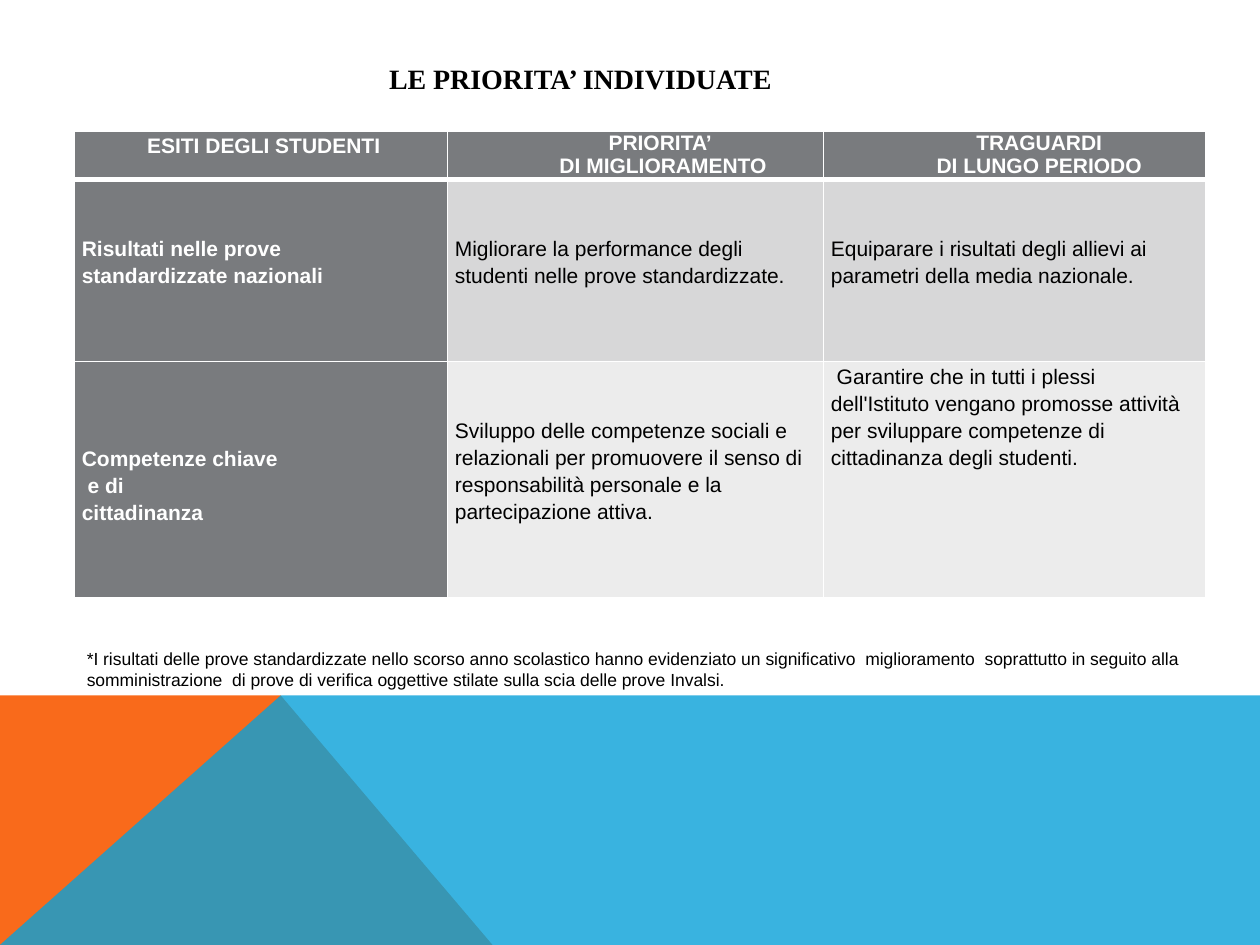
from lxml.etree import SubElement
from pptx import Presentation
from pptx.dml.color import RGBColor
from pptx.enum.text import MSO_ANCHOR, PP_ALIGN
from pptx.oxml import parse_xml
from pptx.oxml.ns import nsdecls, qn
from pptx.util import Cm, Pt

WHITE = RGBColor(0xFF, 0xFF, 0xFF)
BLACK = RGBColor(0, 0, 0)
DARK_GRAY = RGBColor(0x79, 0x7B, 0x7E)
MID_GRAY = RGBColor(0xD7, 0xD7, 0xD8)
LIGHT_GRAY = RGBColor(0xEC, 0xEC, 0xEC)
ORANGE = RGBColor(0xF9, 0x6A, 0x1B)
BLUE = RGBColor(0x08, 0xA1, 0xD9)

COLUMN_WIDTHS = (7.52, 7.58, 7.7)
ROW_HEIGHTS = (0.98, 3.67, 4.75)
BLANK_LINE = 0.55  # height of one table line
TEXT_INDENT = 1

HEADERS = (
    [" ESITI DEGLI STUDENTI"],
    ["PRIORITA’", " DI MIGLIORAMENTO"],
    ["TRAGUARDI", "DI LUNGO PERIODO"],
)
# Each cell: lines left free above the text, paragraphs
BODY_ROWS = (
    (
        (2, ["Risultati nelle prove", "standardizzate nazionali"]),
        (2, ["Migliorare la performance degli studenti nelle prove standardizzate."]),
        (2, ["Equiparare i risultati degli allievi ai parametri della media nazionale."]),
    ),
    (
        (3, ["Competenze chiave", " e di", "cittadinanza"]),
        (2, ["Sviluppo delle competenze sociali e relazionali per promuovere il senso "
             "di responsabilità personale e la partecipazione attiva."]),
        (0, [" Garantire che in tutti i plessi dell'Istituto vengano promosse attività "
             "per sviluppare competenze di cittadinanza degli studenti."]),
    ),
)
FOOTNOTE = (
    "*I risultati delle prove standardizzate nello scorso anno scolastico hanno evidenziato "
    "un significativo  miglioramento  soprattutto in seguito alla somministrazione  di prove "
    "di verifica oggettive stilate sulla scia delle prove Invalsi."
)


def format_paragraph(paragraph, font_name, size, color, bold=False, align=PP_ALIGN.LEFT):
    paragraph.alignment = align
    font = paragraph.font
    font.name, font.size, font.bold = font_name, Pt(size), bold
    font.color.rgb = color


def add_polygon(slide, points, color, alpha=100):
    """Draw a closed outline through points in centimetres; alpha is in percent."""
    corners = [(Cm(x), Cm(y)) for x, y in points]
    builder = slide.shapes.build_freeform(*corners[0], scale=1.0)
    builder.add_line_segments(corners[1:], close=True)
    shape = builder.convert_to_shape()
    shape.shadow.inherit = False
    shape.line.fill.background()
    shape.fill.solid()
    shape.fill.fore_color.rgb = color
    if alpha < 100:
        rgb = shape._element.spPr.find(qn("a:solidFill"))[0]
        SubElement(rgb, qn("a:alpha")).set("val", str(alpha * 1000))


def add_bottom_band(slide, left, top, width, height):
    right, bottom = left + width, top + height
    peak = (left + 5.66, top)
    add_polygon(slide, [(left, bottom), (left, top), peak, (left + 9.93, bottom)], ORANGE)
    add_polygon(slide, [(left, bottom), peak, (right, top), (right, bottom)], BLUE, alpha=80)


def add_title(slide, left, top, width, height):
    title = slide.shapes.title
    title.left, title.top, title.width, title.height = map(Cm, (left, top, width, height))
    frame = title.text_frame
    frame.text = "LE PRIORITA’ INDIVIDUATE"
    frame.vertical_anchor = MSO_ANCHOR.TOP
    format_paragraph(frame.paragraphs[0], "Times New Roman", 16, BLACK, True, PP_ALIGN.CENTER)


def set_borders(cell, bottom_width):
    properties = cell._tc.get_or_add_tcPr()
    for side, width in (("L", 1), ("R", 1), ("T", 1), ("B", bottom_width)):
        properties.append(parse_xml(
            f'<a:ln{side} {nsdecls("a")} w="{Pt(width)}"><a:solidFill>'
            f'<a:srgbClr val="{WHITE}"/></a:solidFill></a:ln{side}>'))


def fill_cell(cell, lines, fill, color, bold=False, align=PP_ALIGN.LEFT,
              free_lines=0, spacing=1.15, indent=0, bottom_width=1):
    set_borders(cell, bottom_width)
    cell.fill.solid()
    cell.fill.fore_color.rgb = fill
    cell.margin_left = cell.margin_right = Cm(0.15)
    cell.margin_top, cell.margin_bottom = Cm(free_lines * BLANK_LINE), 0
    cell.text = "\n".join(lines)
    for paragraph in cell.text_frame.paragraphs:
        format_paragraph(paragraph, "Arial", 12, color, bold, align)
        paragraph.line_spacing = spacing
        paragraph._p.get_or_add_pPr().set("marL", str(Cm(indent)))


def add_priority_table(slide, left, top):
    table = slide.shapes.add_table(
        len(ROW_HEIGHTS), len(COLUMN_WIDTHS), Cm(left), Cm(top),
        Cm(sum(COLUMN_WIDTHS)), Cm(sum(ROW_HEIGHTS))).table
    table.horz_banding = False
    for column, width in zip(table.columns, COLUMN_WIDTHS):
        column.width = Cm(width)
    for row, height in zip(table.rows, ROW_HEIGHTS):
        row.height = Cm(height)

    for index, lines in enumerate(HEADERS):
        first = index == 0
        fill_cell(table.cell(0, index), lines, DARK_GRAY, WHITE, True, PP_ALIGN.CENTER,
                  spacing=1.15 if first else 1.0,
                  indent=0 if first else TEXT_INDENT, bottom_width=3)
    for row, (cells, fill) in enumerate(zip(BODY_ROWS, (MID_GRAY, LIGHT_GRAY)), start=1):
        for index, (free_lines, lines) in enumerate(cells):
            first = index == 0
            fill_cell(table.cell(row, index), lines, DARK_GRAY if first else fill,
                      WHITE if first else BLACK, bold=first, free_lines=free_lines)


def add_footnote(slide, left, top, width, height):
    frame = slide.shapes.add_textbox(*map(Cm, (left, top, width, height))).text_frame
    frame.word_wrap = True
    frame.text = FOOTNOTE
    format_paragraph(frame.paragraphs[0], "Arial", 10, BLACK)


def main():
    presentation = Presentation()
    presentation.slide_width, presentation.slide_height = Cm(25.4), Cm(19.05)
    slide = presentation.slides.add_slide(presentation.slide_layouts[5])
    add_bottom_band(slide, 0, 14.02, 25.4, 5.03)
    add_title(slide, 2.3, 1.12, 18.8, 0.94)
    add_priority_table(slide, 1.5, 2.64)
    add_footnote(slide, 1.5, 12.93, 22.6, 1.12)
    presentation.save("out.pptx")


if __name__ == "__main__":
    main()
